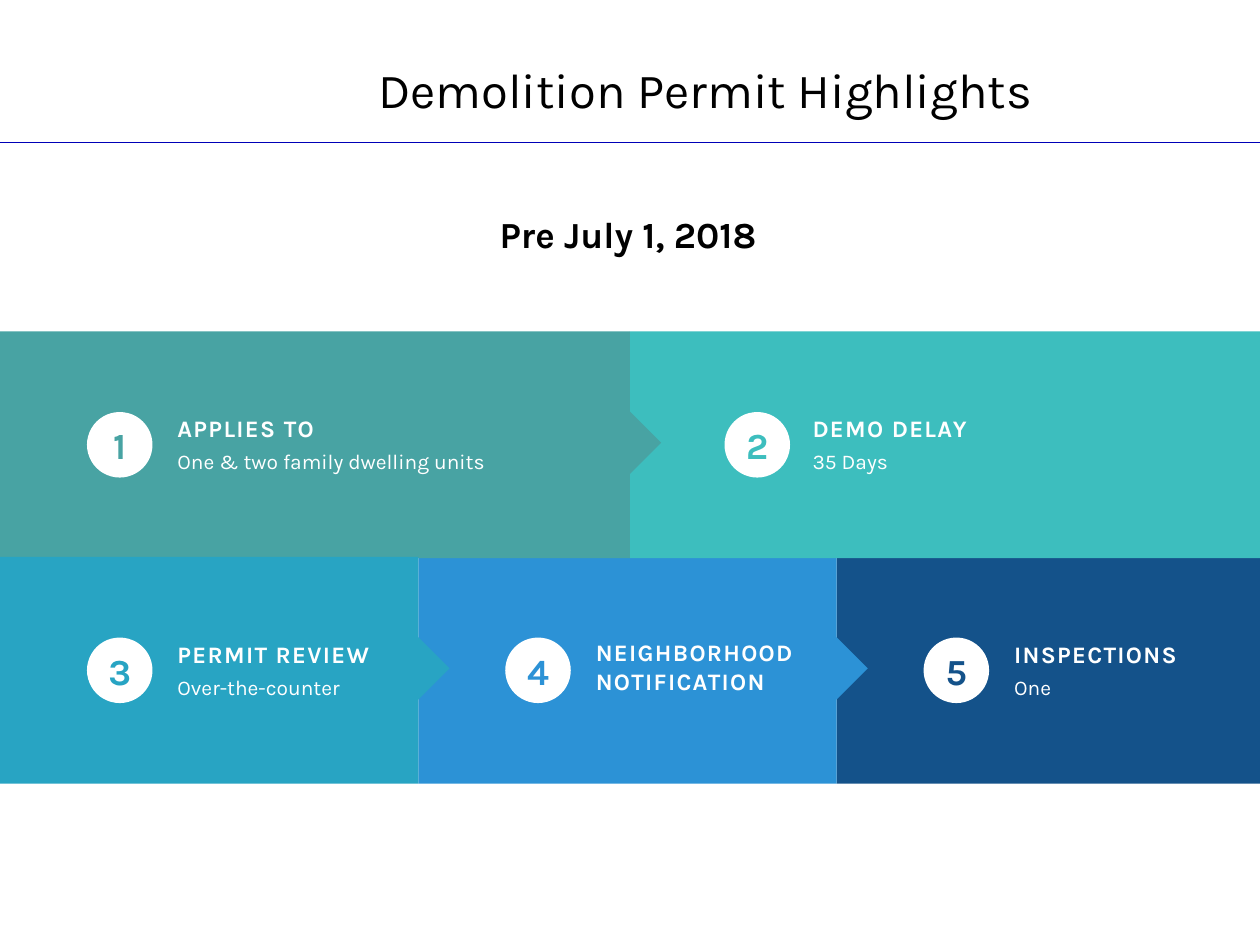
from pptx import Presentation
from pptx.dml.color import RGBColor
from pptx.enum.shapes import MSO_CONNECTOR, MSO_SHAPE
from pptx.enum.text import MSO_ANCHOR, MSO_AUTO_SIZE, PP_ALIGN
from pptx.oxml.ns import qn
from pptx.util import Inches, Pt
from lxml import etree

RECTANGLE, OVAL = MSO_SHAPE.RECTANGLE, MSO_SHAPE.OVAL
STRAIGHT = MSO_CONNECTOR.STRAIGHT
TOP, MIDDLE = MSO_ANCHOR.TOP, MSO_ANCHOR.MIDDLE
LEFT, CENTER = PP_ALIGN.LEFT, PP_ALIGN.CENTER
GROW = MSO_AUTO_SIZE.SHAPE_TO_FIT_TEXT

FONT = "Karla"
BLACK = RGBColor(0x00, 0x00, 0x00)
WHITE = RGBColor(0xFF, 0xFF, 0xFF)
RULE_BLUE = RGBColor(0x00, 0x00, 0xB7)
SAGE = RGBColor(0x48, 0xA3, 0xA3)
TURQUOISE = RGBColor(0x3D, 0xBE, 0xBE)
CYAN = RGBColor(0x28, 0xA4, 0xC3)
BLUE = RGBColor(0x2C, 0x92, 0xD6)
NAVY = RGBColor(0x14, 0x52, 0x8A)

ROW_HEIGHT = 1.8
UPPER, LOWER = 2.63, 4.42
THIRD = 3.32
BADGE = 0.52
ARROW = 0.35
LINE = BADGE / 2

# Number, heading lines, detail, colour, box, badge offset, text offset, arrow.
# Listed from back to front, so that each arrow covers the next panel.
PANELS = [
    ("5", ["INSPECTIONS"], "One", NAVY,
     (2 * THIRD, LOWER, 10 - 2 * THIRD, ROW_HEIGHT), 0.69, 1.31, False),
    ("4", ["NEIGHBORHOOD", "NOTIFICATION"], None, BLUE,
     (THIRD, LOWER, THIRD, ROW_HEIGHT), 0.69, 1.31, True),
    ("2", ["DEMO DELAY"], "35 Days", TURQUOISE,
     (5, UPPER, 5, ROW_HEIGHT), 0.75, 1.35, False),
    ("1", ["APPLIES TO"], "One & two family dwelling units", SAGE,
     (0, UPPER, 5, ROW_HEIGHT), 0.69, 1.31, True),
    ("3", ["PERMIT REVIEW"], "Over-the-counter", CYAN,
     (0, LOWER, THIRD, ROW_HEIGHT), 0.69, 1.31, True),
]


def write(frame, lines, size, color, bold=False, align=LEFT, spacing=None):
    for index, line in enumerate(lines):
        para = frame.paragraphs[0] if index == 0 else frame.add_paragraph()
        para.alignment = align
        span = para.add_run()
        span.text = line
        span.font.name = FONT
        span.font.size = Pt(size)
        span.font.bold = bold
        span.font.color.rgb = color
        if spacing:
            span._r.get_or_add_rPr().set("spc", str(int(spacing * 100)))


def add_text(shapes, box, lines, size, color, anchor=MIDDLE, wrap=True,
             grow=False, **style):
    frame = shapes.add_textbox(*map(Inches, box)).text_frame
    frame.word_wrap = wrap
    frame.vertical_anchor = anchor
    if grow:
        frame.auto_size = GROW
    write(frame, lines, size, color, **style)


def add_filled(shapes, kind, box, color):
    shape = shapes.add_shape(kind, *map(Inches, box))
    shape.shadow.inherit = False
    shape.fill.solid()
    shape.fill.fore_color.rgb = color
    shape.line.fill.background()
    return shape


def add_header(page):
    # Rule across the page, title and subtitle
    rule = page.shapes.add_connector(
        STRAIGHT, Inches(0), Inches(1.13), Inches(10), Inches(1.13))
    rule.line.color.rgb = RULE_BLUE
    rule.line.width = Pt(0.5)
    etree.SubElement(rule._element.spPr, qn("a:effectLst"))
    add_text(page.shapes, (2.87, 0.42, 5.45, 1.04),
             ["Demolition\u00a0Permit Highlights"], 28, BLACK,
             anchor=TOP, grow=True, align=CENTER)
    add_text(page.shapes, (3.78, 1.63, 2.41, 0.45), ["Pre July 1, 2018"], 21,
             BLACK, anchor=TOP, wrap=False, grow=True, bold=True, align=CENTER)


def add_panel(page, number, heading, detail, color, box, badge_offset,
              text_offset, has_arrow):
    left, top, width, height = box
    shapes = page.shapes.add_group_shape().shapes
    add_filled(shapes, RECTANGLE, box, color)
    badge_top = top + (height - BADGE) / 2

    # Arrow: a square turned on its corner, centred on the right edge
    if has_arrow:
        arrow = add_filled(
            shapes, RECTANGLE,
            (left + width - ARROW / 2, top + 0.71, ARROW, ARROW), color)
        arrow.rotation = 45

    # Numbered badge
    badge = add_filled(
        shapes, OVAL, (left + badge_offset, badge_top, BADGE, BADGE), WHITE)
    frame = badge.text_frame
    frame.margin_left = frame.margin_right = 0
    frame.margin_top = frame.margin_bottom = 0
    frame.vertical_anchor = MIDDLE
    write(frame, [number], 21, color, bold=True, align=CENTER)

    # Heading and detail
    text_left = left + text_offset
    heading_height = LINE if detail else 0.46
    add_text(shapes, (text_left, badge_top, 1.92, heading_height), heading,
             13.5, WHITE, bold=True, spacing=0.8)
    if detail:
        add_text(shapes, (text_left, badge_top + LINE, 3.18, LINE), [detail],
                 12, WHITE)


def main():
    deck = Presentation()
    deck.slide_width, deck.slide_height = Inches(10), Inches(7.5)
    page = deck.slides.add_slide(deck.slide_layouts[6])
    add_header(page)
    for panel in PANELS:
        add_panel(page, *panel)
    deck.save("out.pptx")


if __name__ == "__main__":
    main()
